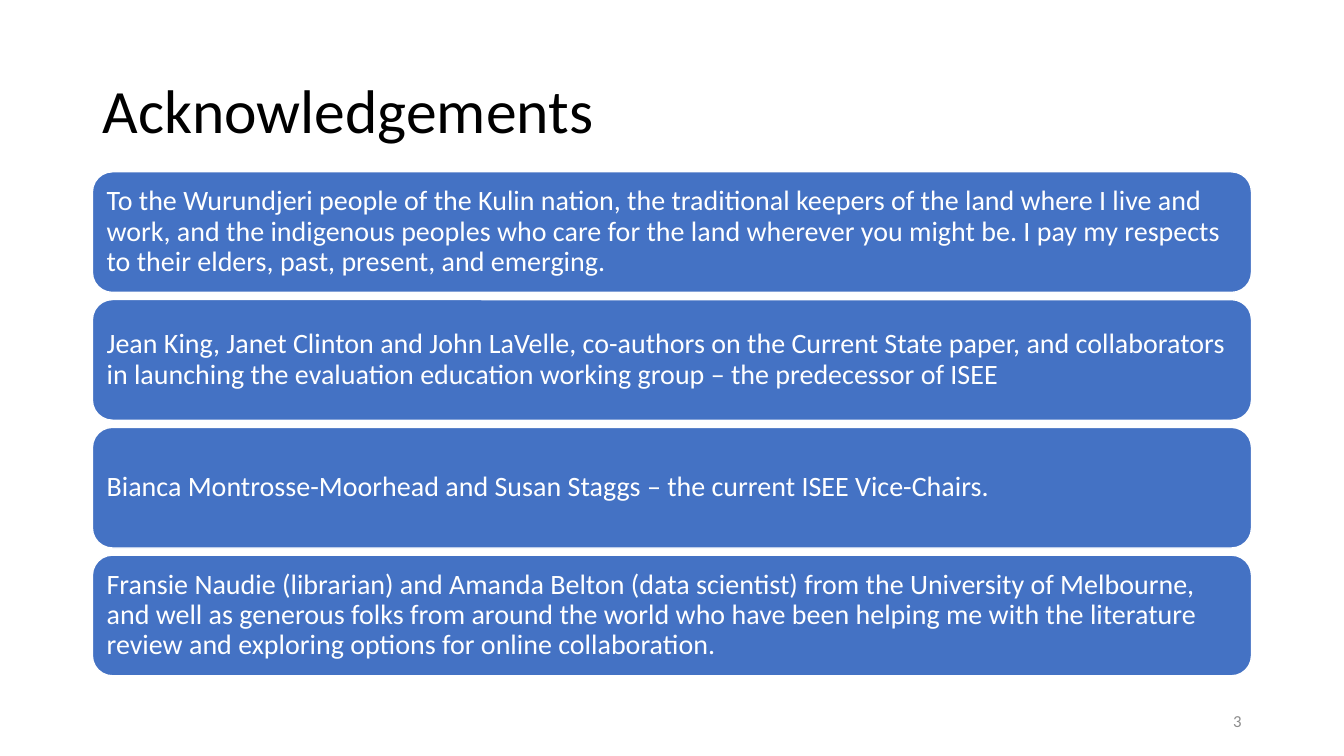
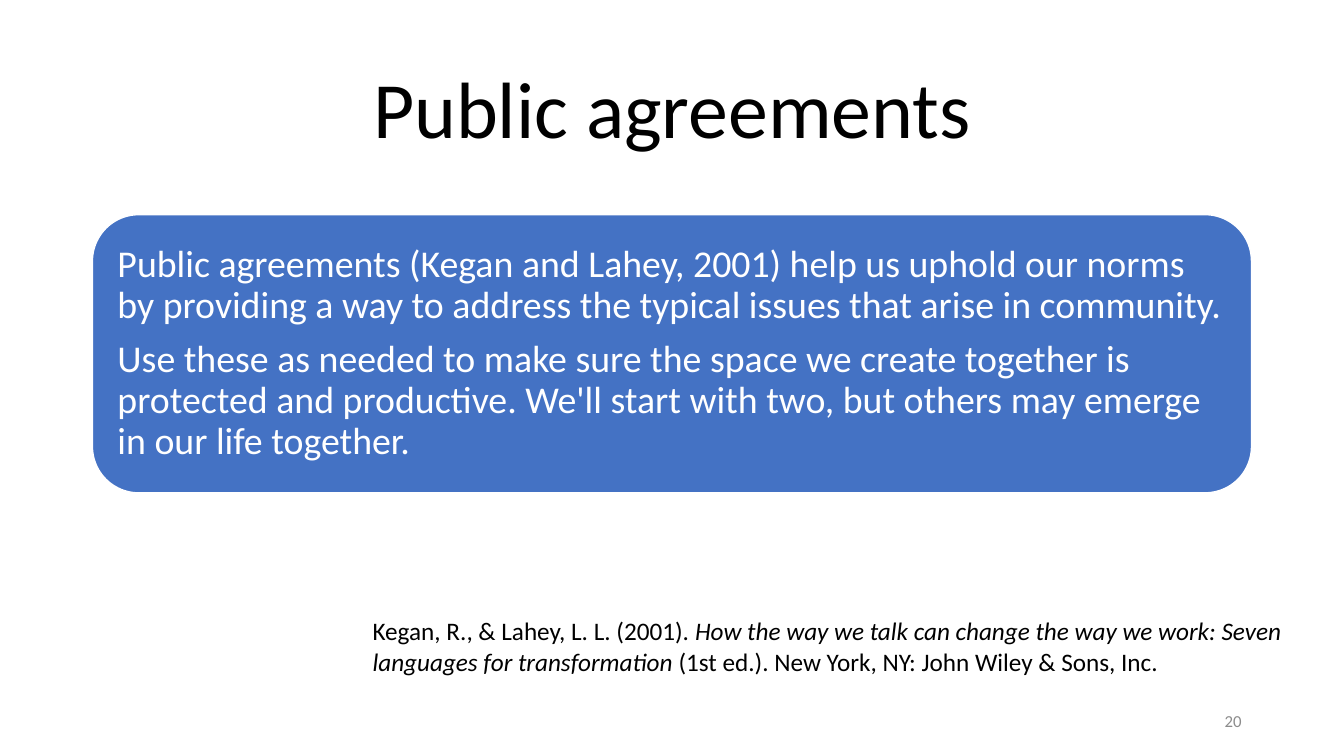
from pptx import Presentation
from pptx.dml.color import RGBColor
from pptx.enum.shapes import MSO_SHAPE
from pptx.enum.text import MSO_ANCHOR as ANCHOR, MSO_AUTO_SIZE as AUTO, PP_ALIGN as ALIGN
from pptx.util import Cm, Pt

SLIDES = [
    {
        "title": "Acknowledgements",
        "title_format": {"size": 44, "align": ALIGN.LEFT},
        "panels": [
            ["To the Wurundjeri people of the Kulin nation, the traditional keepers of the land where I live and work, and the indigenous peoples who care for the land wherever you might be. I pay my respects to their elders, past, present, and emerging."],
            ["Jean King, Janet Clinton and John LaVelle, co-authors on the Current State paper, and collaborators in launching the evaluation education working group – the predecessor of ISEE"],
            ["Bianca Montrosse-Moorhead and Susan Staggs – the current ISEE Vice-Chairs."],
            ["Fransie Naudie (librarian) and Amanda Belton (data scientist) from the University of Melbourne, and well as generous folks from around the world who have been helping me with the literature review and exploring options for online collaboration."],
        ],
        "panel_format": {"top": 4.33, "height": 3.04, "size": 20, "inset": 0.21},
        "citation": [],
        "number": "3",
    },
    {
        "title": "Public agreements",
        "title_format": {"size": 57, "align": ALIGN.CENTER},
        "panels": [
            [
                "Public agreements (Kegan and Lahey, 2001) help us uphold our norms by providing a way to address the typical issues that arise in community.",
                "Use these as needed to make sure the space we create together is protected and productive. We'll start with two, but others may emerge in our life together.",
            ],
        ],
        "panel_format": {"top": 5.41, "height": 7.01, "size": 27, "inset": 0.29},
        "citation": [
            ("Kegan, R., & Lahey, L. L. (2001). ", False),
            ("How the way we talk can change the way we work: Seven languages for transformation", True),
            (" (1st ed.). New York, NY: John Wiley & Sons, Inc.", False),
        ],
        "number": "20",
    },
]

FONT = "Calibri"
COLORS = {"text": "000000", "panel": "4472C4", "white": "FFFFFF", "number": "8C8C8C"}
LEFT, WIDTH = 2.33, 29.21
TITLE_BOX = (LEFT, 1.01, WIDTH, 3.68)
CITATION_BOX = (9.14, 15.39, 23.44, 2.57)
NUMBER_BOX = (23.92, 17.65, 7.62, 1.01)
PANEL_GAP = 0.18


def rgb(name):
    return RGBColor.from_string(COLORS[name])


def lengths(box):
    return [Cm(v) for v in box]


def set_attrs(obj, values):
    for name, value in values.items():
        setattr(obj, name, value)


def add_run(p, text, size, color, italic=False):
    r = p.add_run()
    r.text = text
    set_attrs(r.font, {"name": FONT, "size": Pt(size), "italic": italic})
    r.font.color.rgb = rgb(color)


def add_title(s, text, size, align):
    sp = s.shapes.title
    set_attrs(sp, dict(zip(("left", "top", "width", "height"), lengths(TITLE_BOX))))
    tf = sp.text_frame
    set_attrs(tf, {"auto_size": AUTO.NONE, "vertical_anchor": ANCHOR.MIDDLE, "word_wrap": True})
    p = tf.paragraphs[0]
    set_attrs(p, {"alignment": align, "line_spacing": 0.9})
    add_run(p, text, size, "text")


def add_panels(s, panels, top, height, size, inset):
    for i, texts in enumerate(panels):
        y = top + i * (height + PANEL_GAP)
        sp = s.shapes.add_shape(MSO_SHAPE.ROUNDED_RECTANGLE, *lengths((LEFT, y, WIDTH, height)))
        sp.shadow.inherit = False
        sp.fill.solid()
        sp.fill.fore_color.rgb = rgb("panel")
        sp.line.color.rgb = rgb("white")
        sp.line.width = Pt(1)
        tf = sp.text_frame
        set_attrs(tf, {"word_wrap": True, "vertical_anchor": ANCHOR.MIDDLE})
        set_attrs(tf, {f"margin_{side}": Cm(inset) for side in ("left", "top", "right", "bottom")})
        for j, text in enumerate(texts):
            p = tf.add_paragraph() if j else tf.paragraphs[0]
            set_attrs(p, {"alignment": ALIGN.LEFT, "line_spacing": 0.9})
            if j:
                p.space_before = Pt(size * 0.35)
            add_run(p, text, size, "white")


def add_text(s, box, runs, size, color, align, anchor):
    tf = s.shapes.add_textbox(*lengths(box)).text_frame
    set_attrs(tf, {"word_wrap": True, "vertical_anchor": anchor})
    p = tf.paragraphs[0]
    p.alignment = align
    for text, italic in runs:
        add_run(p, text, size, color, italic)


def main():
    prs = Presentation()
    set_attrs(prs, {"slide_width": Cm(33.87), "slide_height": Cm(19.05)})
    for content in SLIDES:
        s = prs.slides.add_slide(prs.slide_layouts.get_by_name("Title Only"))
        add_title(s, content["title"], **content["title_format"])
        add_panels(s, content["panels"], **content["panel_format"])
        if content["citation"]:
            add_text(s, CITATION_BOX, content["citation"], 18, "text", ALIGN.LEFT, ANCHOR.TOP)
        add_text(s, NUMBER_BOX, [(content["number"], False)], 12, "number", ALIGN.RIGHT, ANCHOR.MIDDLE)
    prs.save("out.pptx")


if __name__ == "__main__":
    main()
